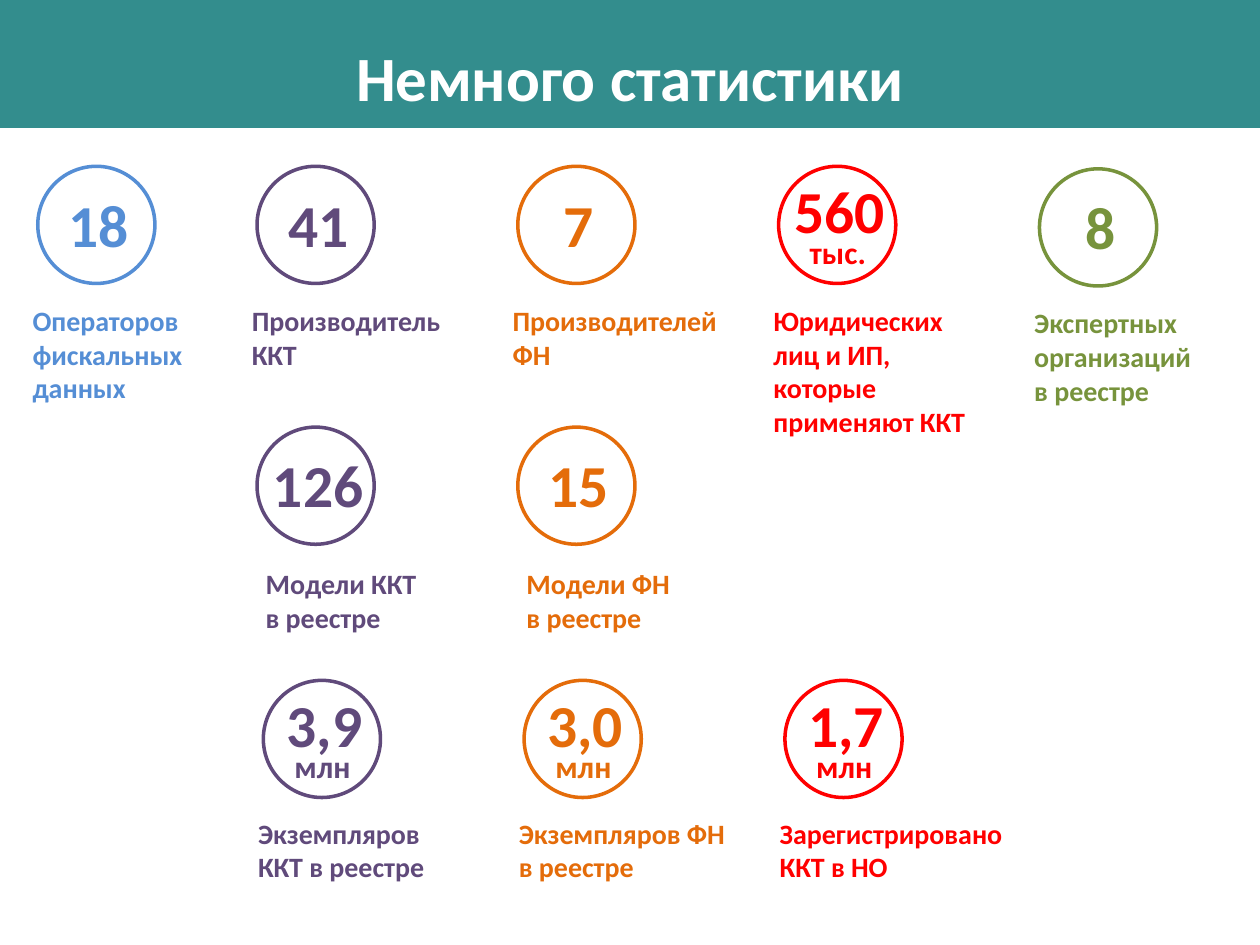
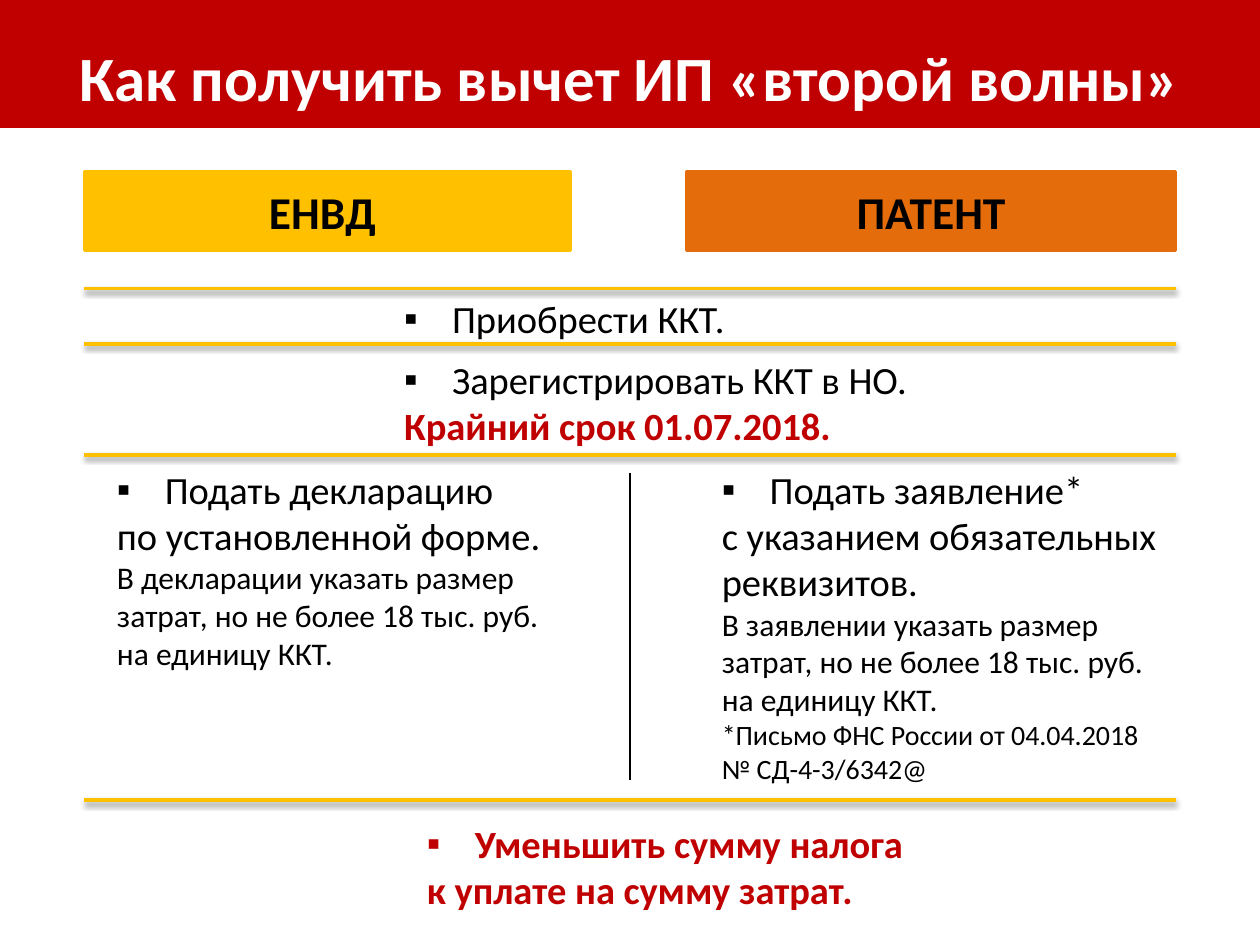
"""Builds two slides: cash register statistics and the steps to a tax deduction."""
from dataclasses import dataclass

from lxml.etree import SubElement
from pptx import Presentation
from pptx.dml.color import RGBColor
from pptx.enum.shapes import MSO_CONNECTOR, MSO_SHAPE
from pptx.enum.text import MSO_ANCHOR, MSO_AUTO_SIZE, PP_ALIGN
from pptx.oxml.ns import qn
from pptx.util import Inches, Pt


class Theme:
    """Shared colours, font, type sizes and line widths."""
    font = "Calibri"
    white, black = "FFFFFF", "000000"
    teal, crimson, amber = "338D8D", "C00000", "FFC000"
    blue, purple, orange, red, green = "558ED5", "604A7B", "E46C0A", "FF0000", "77933C"
    title, number, heading, step, detail, caption = 36, 34, 26, 22, 18, 16
    outline, hairline = 2, 0.75


@dataclass
class Line:
    """One paragraph of text with its formatting."""
    text: str
    size: float
    colour: str = Theme.black
    bold: bool = False
    bullet: bool = False
    before: float = 0


@dataclass
class Row:
    """Placement of one row of circles and its captions."""
    top: float
    shift: float
    caption_dx: float
    caption_dy: float
    caption_width: float


STATS_TITLE = "Немного статистики"
ROWS = [
    Row(1.32, 0, -0.14, 1.04, 1.89),
    Row(3.39, 0, -0.03, 1.06, 1.89),
    Row(5.4, 0.05, -0.14, 1.03, 1.84),
]
CIRCLE, FIRST_LEFT, SECOND_LEFT, PITCH = 0.93, 0.3, 2.04, 2.07
LAST_CAPTION_WIDTH = 2.16
STATS = [
    (Theme.blue, {0: ("18", "", "Операторов фискальных данных")}),
    (Theme.purple, {
        0: ("41", "", "Производитель ККТ"),
        1: ("126", "", "Модели ККТ\nв реестре"),
        2: ("3,9", "млн", "Экземпляров ККТ в реестре"),
    }),
    (Theme.orange, {
        0: ("7", "", "Производителей ФН"),
        1: ("15", "", "Модели ФН\nв реестре"),
        2: ("3,0", "млн", "Экземпляров ФН в реестре"),
    }),
    (Theme.red, {
        0: ("560", "тыс.", "Юридических лиц и ИП, которые применяют ККТ"),
        2: ("1,7", "млн", "Зарегистрировано ККТ в НО"),
    }),
    (Theme.green, {0: ("8", "", "Экспертных организаций\nв реестре")}),
]

DEDUCTION_TITLE = "Как получить вычет ИП «второй волны»"
REGIMES = [
    ("ЕНВД", Theme.amber, 0.67, 3.86, 3.78),
    ("ПАТЕНТ", Theme.orange, 5.45, 3.88, 3.88),
]
AMOUNT = "указать размер затрат, но не более 18 тыс. руб. на единицу ККТ."
STEPS = [
    ((0.83, 3.65, 3.78, 1.87), [
        Line("Подать декларацию", Theme.step, bullet=True),
        Line("по установленной форме.", Theme.step),
        Line(f"В декларации {AMOUNT}", Theme.detail),
    ]),
    ((3.11, 2.29, 4.25, 1.33), [
        Line("Приобрести ККТ.", Theme.step, bullet=True),
        Line("Зарегистрировать ККТ в НО.", Theme.step, bullet=True, before=8.5),
        Line("Крайний срок 01.07.2018.", Theme.step, Theme.crimson, True),
    ]),
    ((5.63, 3.65, 3.78, 2.73), [
        Line("Подать заявление*", Theme.step, bullet=True),
        Line("с указанием обязательных реквизитов.", Theme.step),
        Line(f"В заявлении {AMOUNT}", Theme.detail),
        Line("*Письмо ФНС России от 04.04.2018 № СД-4-3/6342@", Theme.caption),
    ]),
    ((3.29, 6.46, 5, 0.84), [
        Line("Уменьшить сумму налога", Theme.step, Theme.crimson, True, True),
        Line("к уплате на сумму затрат.", Theme.step, Theme.crimson, True),
    ]),
]
RULE_TOPS = [2.29, 2.73, 3.61, 6.35]
RULE_LEFT, RULE_RIGHT = 0.67, 9.33


def rgb(colour):
    """Turn a hex string into a colour."""
    return RGBColor.from_string(colour)


def add_bullet(paragraph):
    """Give a paragraph a square bullet with a hanging indent."""
    properties = paragraph._p.get_or_add_pPr()
    properties.set("marL", str(Inches(0.38)))
    properties.set("indent", str(-Inches(0.38)))
    SubElement(properties, qn("a:buFont")).set("typeface", "Arial")
    SubElement(properties, qn("a:buChar")).set("char", "▪")


def fill_frame(frame, lines, align):
    """Write formatted lines into a text frame."""
    frame.text = "\n".join(line.text for line in lines)
    for paragraph, line in zip(frame.paragraphs, lines):
        if line.bullet:
            add_bullet(paragraph)
        if line.before:
            paragraph.space_before = Pt(line.before)
        paragraph.alignment = align
        font = paragraph.font
        font.name, font.size, font.bold = Theme.font, Pt(line.size), line.bold
        font.color.rgb = rgb(line.colour)


def add_text(slide, box, lines, align=PP_ALIGN.LEFT, wrap=True):
    """Add a text box that grows with its lines."""
    frame = slide.shapes.add_textbox(*map(Inches, box)).text_frame
    frame.word_wrap = wrap
    frame.auto_size = MSO_AUTO_SIZE.SHAPE_TO_FIT_TEXT
    fill_frame(frame, lines, align)


def add_outlined(slide, kind, box, colour, filled=True):
    """Add a preset shape with an outline and an optional fill of one colour."""
    shape = slide.shapes.add_shape(kind, *map(Inches, box))
    shape.shadow.inherit = False
    shape.line.color.rgb = rgb(colour)
    shape.line.width = Pt(Theme.outline)
    if filled:
        shape.fill.solid()
        shape.fill.fore_color.rgb = rgb(colour)
    else:
        shape.fill.background()


def add_rule(slide, start, end, colour, width, shadow=False):
    """Add a straight line, with a soft shadow below it if wanted."""
    rule = slide.shapes.add_connector(
        MSO_CONNECTOR.STRAIGHT, *map(Inches, (*start, *end)))
    rule.line.color.rgb = rgb(colour)
    rule.line.width = Pt(width)
    effects = SubElement(rule._element.spPr, qn("a:effectLst"))
    if shadow:
        outer = SubElement(effects, qn("a:outerShdw"), blurRad=str(Pt(3.1)),
                           dist=str(Pt(1.6)), dir="5400000", rotWithShape="0")
        shade = SubElement(outer, qn("a:srgbClr"), val=Theme.black)
        SubElement(shade, qn("a:alpha"), val="38000")


def add_titled_slide(deck, heading, band_colour):
    """Add a slide with its title on a full-width band."""
    slide = deck.slides.add_slide(deck.slide_layouts[5])
    add_outlined(slide, MSO_SHAPE.RECTANGLE, (0, -0.01, 10, 1.01), band_colour)
    title = slide.shapes.title
    title.left, title.top, title.width, title.height = map(Inches, (0, 0.21, 10, 0.79))
    frame = title.text_frame
    frame.auto_size = MSO_AUTO_SIZE.NONE
    frame.vertical_anchor = MSO_ANCHOR.MIDDLE
    fill_frame(frame, [Line(heading, Theme.title, Theme.white, True)], PP_ALIGN.CENTER)
    slide.shapes._spTree.append(title._element)
    return slide


def add_stat(slide, left, row, colour, stat):
    """Add a circled figure with its unit and caption."""
    number, unit, caption = stat
    top = row.top + (0.02 if colour == Theme.green else 0)
    centre = left + CIRCLE / 2
    caption_width = LAST_CAPTION_WIDTH if "Зарегистрировано" in caption else row.caption_width
    add_text(slide, (left + row.caption_dx, top + row.caption_dy, caption_width, 0.64),
             [Line(text, Theme.caption, colour, True) for text in caption.split("\n")])
    add_outlined(slide, MSO_SHAPE.OVAL, (left, top, CIRCLE, CIRCLE), colour, False)
    number_width = 0.2 + sum(0.12 if sign == "," else 0.24 for sign in number)
    number_top = top + (0.01 if unit else 0.12)
    add_text(slide, (centre + 0.02 - number_width / 2, number_top, number_width, 0.67),
             [Line(number, Theme.number, colour, True)], PP_ALIGN.CENTER, False)
    if unit:
        add_text(slide, (centre - 0.32, top + 0.48, 0.65, 0.4),
                 [Line(unit, Theme.detail, colour, True)], PP_ALIGN.CENTER, False)


def build_stats(deck):
    """Build the statistics slide."""
    slide = add_titled_slide(deck, STATS_TITLE, Theme.teal)
    for column, (colour, stats) in enumerate(STATS):
        left = SECOND_LEFT + (column - 1) * PITCH if column else FIRST_LEFT
        for index, stat in stats.items():
            row = ROWS[index]
            add_stat(slide, left + row.shift, row, colour, stat)


def build_deduction(deck):
    """Build the slide with the steps to the deduction."""
    slide = add_titled_slide(deck, DEDUCTION_TITLE, Theme.crimson)
    for regime, colour, left, width, label_width in REGIMES:
        add_outlined(slide, MSO_SHAPE.RECTANGLE, (left, 1.36, width, 0.63), colour)
        add_text(slide, (left, 1.41, label_width, 0.54),
                 [Line(regime, Theme.heading, bold=True)], PP_ALIGN.CENTER)
    for box, lines in STEPS:
        add_text(slide, box, lines)
    for top in RULE_TOPS:
        add_rule(slide, (RULE_LEFT, top), (RULE_RIGHT, top),
                 Theme.amber, Theme.outline, shadow=True)
    add_rule(slide, (5, 3.75), (5, 6.19), Theme.black, Theme.hairline)


def main():
    """Build and save the presentation."""
    deck = Presentation()
    deck.slide_width, deck.slide_height = Inches(10), Inches(7.5)
    build_stats(deck)
    build_deduction(deck)
    deck.save("out.pptx")


if __name__ == "__main__":
    main()
